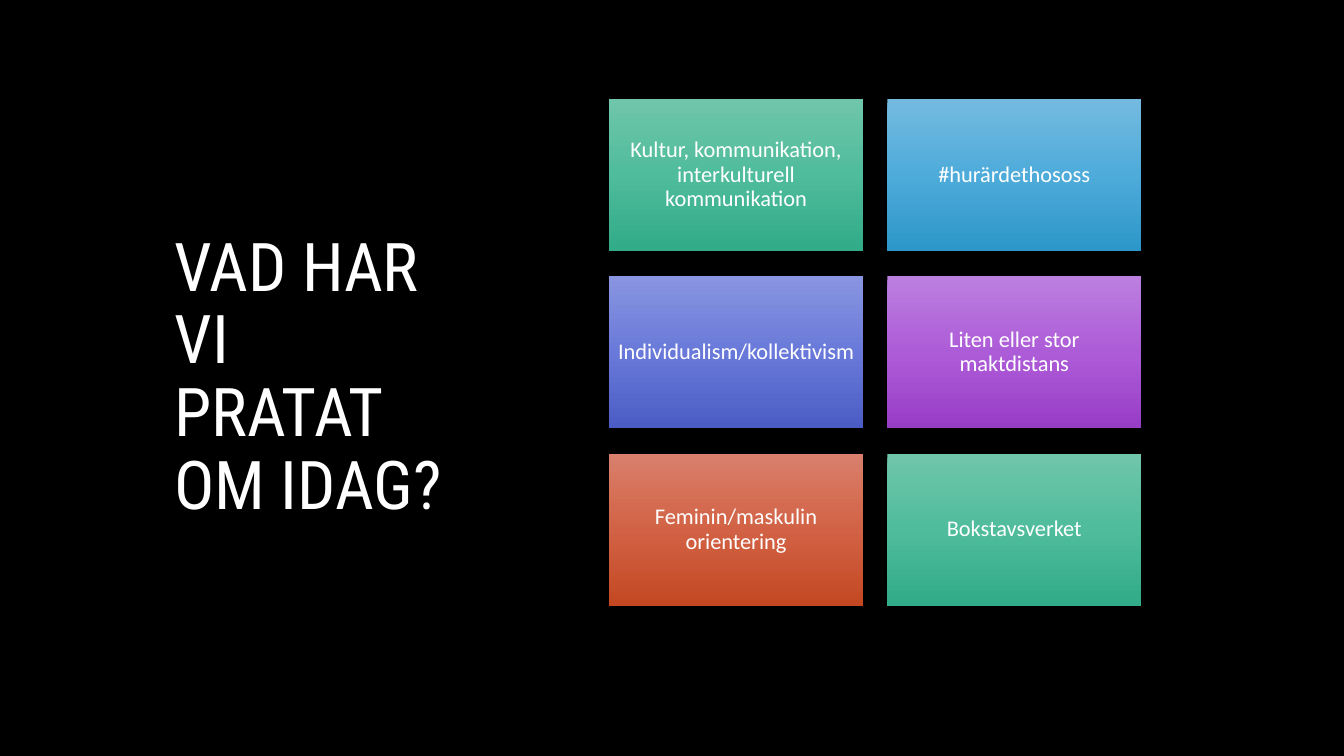
from copy import deepcopy

from pptx import Presentation
from pptx.dml.color import RGBColor
from pptx.enum.shapes import MSO_SHAPE
from pptx.enum.text import MSO_ANCHOR, MSO_AUTO_SIZE, PP_ALIGN
from pptx.oxml.ns import qn
from pptx.util import Inches, Pt

RECTANGLE = MSO_SHAPE.RECTANGLE
MIDDLE = MSO_ANCHOR.MIDDLE
LEFT, CENTER = PP_ALIGN.LEFT, PP_ALIGN.CENTER
NO_AUTOFIT = MSO_AUTO_SIZE.NONE
TITLE_ONLY = 5

BLACK, WHITE = "000000", "FFFFFF"
GREEN = ("70C6AA", "4FBC9B", "31AB88")
BLUE = ("74BAE0", "4EABDA", "2D97C9")
INDIGO = ("8995E0", "6979D9", "4B5DC5")
PURPLE = ("BC7FDF", "AD5CD8", "983DC6")
ORANGE = ("D9806C", "D26245", "C34822")

TOPICS = [
    ("Kultur, kommunikation, interkulturell kommunikation", GREEN),
    ("#hurärdethososs", BLUE),
    ("Individualism/kollektivism", INDIGO),
    ("Liten eller stor maktdistans", PURPLE),
    ("Feminin/maskulin orientering", ORANGE),
    ("Bokstavsverket", GREEN),
]
COLUMNS = 2
CARD_WIDTH, CARD_HEIGHT = 2.52, 1.51


def color(hex_string):
    return RGBColor.from_string(hex_string)


def write(shape, text, font_name, size, alignment):
    frame = shape.text_frame
    frame.text = text
    frame.word_wrap = True
    frame.auto_size = NO_AUTOFIT
    frame.vertical_anchor = MIDDLE
    paragraph = frame.paragraphs[0]
    paragraph.alignment = alignment
    paragraph.line_spacing = 0.9
    font = paragraph.runs[0].font
    font.name = font_name
    font.size = Pt(size)
    font.color.rgb = color(WHITE)


def fill_gradient(shape, shades):
    """Fill from top to bottom with three evenly spaced shades."""
    fill = shape.fill
    fill.gradient()
    fill.gradient_angle = 270
    stop_list = shape.element.spPr.find(".//" + qn("a:gsLst"))
    stop_list.insert(1, deepcopy(stop_list[0]))
    for stop, shade, position in zip(fill.gradient_stops, shades, (0, 0.5, 1)):
        stop.color.rgb = color(shade)
        stop.position = position


def add_heading(slide, left, top, width, height):
    heading = slide.shapes.title
    heading.left, heading.top = Inches(left), Inches(top)
    heading.width, heading.height = Inches(width), Inches(height)
    write(heading, "VAD HAR VI PRATAT OM IDAG?", "Roboto Condensed", 48, LEFT)


def add_card(slide, left, top, topic, shades):
    card = slide.shapes.add_shape(RECTANGLE, Inches(left), Inches(top),
                                  Inches(CARD_WIDTH), Inches(CARD_HEIGHT))
    card.shadow.inherit = False
    card.line.fill.background()
    fill_gradient(card, shades)
    write(card, topic, "Calibri", 16, CENTER)
    frame = card.text_frame
    frame.margin_left = frame.margin_right = Inches(0.07)
    frame.margin_top = frame.margin_bottom = Inches(0.07)


def add_topic_grid(slide, left, top, width, height):
    rows = len(TOPICS) // COLUMNS
    column_step = (width - CARD_WIDTH) / (COLUMNS - 1)
    row_step = (height - CARD_HEIGHT) / (rows - 1)
    for index, (topic, shades) in enumerate(TOPICS):
        row, column = divmod(index, COLUMNS)
        add_card(slide, left + column * column_step, top + row * row_step,
                 topic, shades)


def main():
    presentation = Presentation()
    presentation.slide_width = Inches(13.33)
    presentation.slide_height = Inches(7.5)
    slide = presentation.slides.add_slide(presentation.slide_layouts[TITLE_ONLY])

    # Background
    background = slide.background.fill
    background.solid()
    background.fore_color.rgb = color(BLACK)

    # Heading on the left, topic cards on the right
    add_heading(slide, 1.63, 2.1, 2.86, 3.31)
    add_topic_grid(slide, 6.04, 0.98, 5.28, 5.03)

    presentation.save("out.pptx")


if __name__ == "__main__":
    main()
